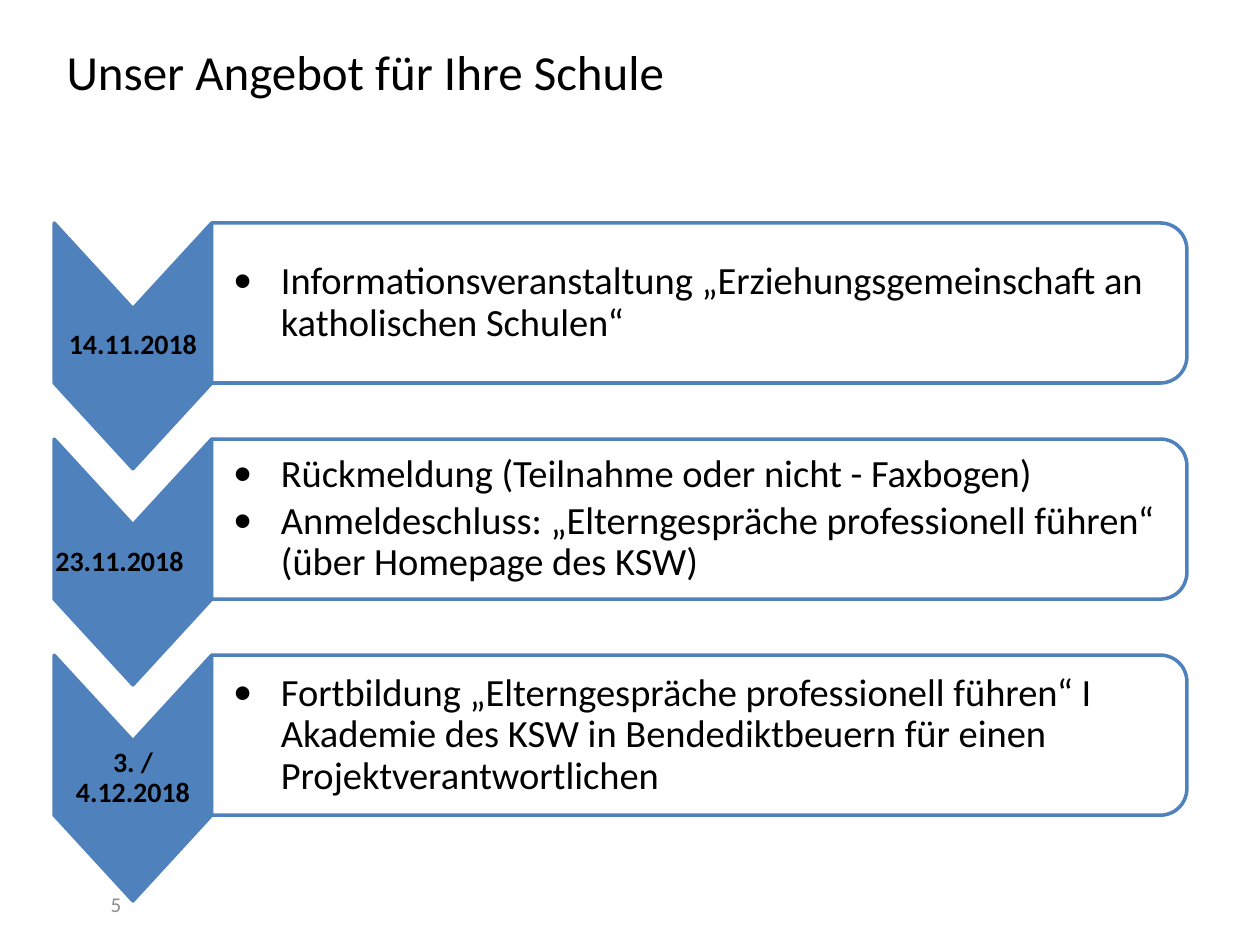
import math

import pptx
import pptx.dml.color
import pptx.enum.text
import pptx.oxml
import pptx.oxml.ns
import pptx.util

Inches, Pt = pptx.util.Inches, pptx.util.Pt
Align = pptx.enum.text.PP_ALIGN
BLUE, WHITE, BLACK, GREY = "4F81BD", "FFFFFF", "000000", "8C8C8C"
NAMESPACE = pptx.oxml.ns.nsdecls("a")


def color(hex_text):
    return pptx.dml.color.RGBColor.from_string(hex_text)


def write(shape, lines, size, ink=BLACK, align=Align.LEFT, bold=False,
          insets=(0.1, 0.05, 0.1, 0.05), spacing=None, after=None, bullet=False):
    frame = shape.text_frame
    frame.word_wrap = True
    frame.vertical_anchor = pptx.enum.text.MSO_ANCHOR.MIDDLE
    (frame.margin_left, frame.margin_top,
     frame.margin_right, frame.margin_bottom) = map(Inches, insets)
    for number, line in enumerate(lines):
        para = frame.add_paragraph() if number else frame.paragraphs[0]
        para.add_run().text = line
        para.alignment = align
        if spacing:
            para.line_spacing = spacing
            para.space_after = Pt(after)
        if bullet:
            properties = para._p.get_or_add_pPr()
            properties.set("marL", str(Inches(0.38)))
            properties.set("indent", str(-Inches(0.38)))
            for mark in ('buFont {} typeface="Calibri"', 'buChar {} char="•"'):
                properties.append(pptx.oxml.parse_xml(f"<a:{mark.format(NAMESPACE)}/>"))
        para.font.name = "Calibri"
        para.font.size = Pt(size)
        para.font.bold = bold
        para.font.color.rgb = color(ink)


deck = pptx.Presentation()
deck.slide_width, deck.slide_height = Inches(10), Inches(7.5)
page = deck.slides.add_slide(deck.slide_layouts[6])

# Title
title = page.shapes.add_textbox(Inches(0.43), Inches(0.29), Inches(8.28), Inches(0.55))
write(title, ["Unser Angebot für Ihre Schule"], 28)

# Grid of the timeline: date column, text column, equal rows
LEFT, SPLIT, RIGHT = 0.43, 1.68, 9.42
MIDDLE = (LEFT + SPLIT) / 2
FIRST_ROW, ROW_STEP, ROW_HEIGHT = 1.77, 1.715, 1.27
NOTCH, RADIUS = 0.68, 0.21

steps = [
    ("14.11.2018",
     ["Informationsveranstaltung „Erziehungsgemeinschaft an katholischen Schulen“"]),
    ("23.11.2018\t",
     ["Rückmeldung (Teilnahme oder nicht - Faxbogen)",
      "Anmeldeschluss: „Elterngespräche professionell führen“ (über Homepage des KSW)"]),
    ("3. / 4.12.2018",
     ["Fortbildung „Elterngespräche professionell führen“ I Akademie des KSW "
      "in Bendediktbeuern für einen Projektverantwortlichen"]),
]

for row, (date, topics) in enumerate(steps):
    top = FIRST_ROW + row * ROW_STEP
    bottom = top + ROW_HEIGHT

    # Downward chevron and panel with rounded right corners
    chevron_points = [(SPLIT, top), (SPLIT, bottom), (MIDDLE, bottom + NOTCH),
                      (LEFT, bottom), (LEFT, top), (MIDDLE, top + NOTCH)]
    panel_points = [(SPLIT, bottom), (SPLIT, top)]
    for center_y, start in ((top + RADIUS, -90), (bottom - RADIUS, 0)):
        for degrees in range(start, start + 91, 6):
            angle = math.radians(degrees)
            panel_points.append((RIGHT - RADIUS + RADIUS * math.cos(angle),
                                 center_y + RADIUS * math.sin(angle)))

    outlines = []
    for points, fill in ((chevron_points, BLUE), (panel_points, WHITE)):
        corners = [(Inches(x), Inches(y)) for x, y in points]
        builder = page.shapes.build_freeform(*corners[0])
        builder.add_line_segments(corners[1:], close=True)
        outline = builder.convert_to_shape()
        outline.shadow.inherit = False
        outline.fill.solid()
        outline.fill.fore_color.rgb = color(fill)
        outline.line.color.rgb = color(BLUE)
        outline.line.width = Pt(2)
        outlines.append(outline)
    chevron, panel = outlines

    # Panel fill is 90 % opaque
    fill_color = panel._element.spPr.find(
        pptx.oxml.ns.qn("a:solidFill")).find(pptx.oxml.ns.qn("a:srgbClr"))
    fill_color.append(pptx.oxml.parse_xml(f'<a:alpha {NAMESPACE} val="90000"/>'))

    write(chevron, [date], 16, align=Align.CENTER, bold=True,
          insets=(0.01, 0.64, 0.01, 0.64), spacing=0.9, after=5.6)
    write(panel, topics, 22, insets=(0.17, 0.07, 0.07, 0.07),
          spacing=0.9, after=3.3, bullet=True)

# Page number
number_box = page.shapes.add_textbox(Inches(0.51), Inches(6.98), Inches(0.55), Inches(0.39))
write(number_box, ["5"], 12, ink=GREY, align=Align.RIGHT)

deck.save("out.pptx")
